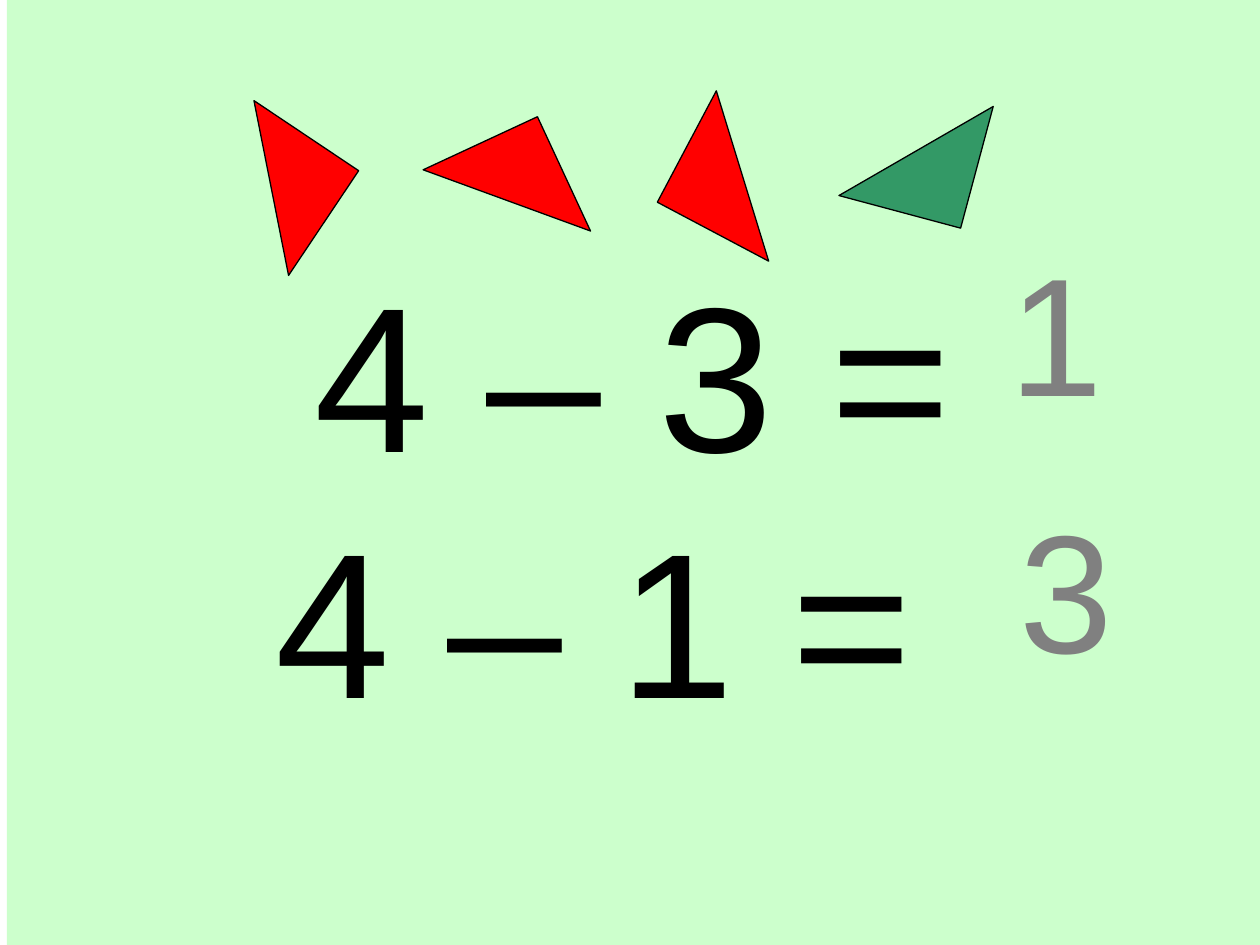
from pptx import Presentation
from pptx.dml.color import RGBColor
from pptx.enum.shapes import MSO_SHAPE
from pptx.enum.text import MSO_ANCHOR, PP_ALIGN
from pptx.util import Pt

HUES = {"mint": "CCFFCC", "red": "FF0000", "green": "339966",
        "black": "000000", "gray": "808080"}


class Board:
    """Holds the style and the current slide."""

    def __init__(self, deck, font="Arial"):
        self.font = font
        self.slide = deck.slides.add_slide(deck.slide_layouts[6])

    def hue(self, name):
        return RGBColor.from_string(HUES[name])

    def shape(self, kind, left, top, width, height, fill, line=None, turn=0):
        item = self.slide.shapes.add_shape(
            kind, Pt(left), Pt(top), Pt(width), Pt(height))
        item.shadow.inherit = False
        item.rotation = turn
        item.fill.solid()
        item.fill.fore_color.rgb = self.hue(fill)
        if line:
            item.line.color.rgb = self.hue(line)
            item.line.width = Pt(0.75)
        else:
            item.line.fill.background()

    def text(self, words, left, top, width, height, size, color, align, anchor):
        box = self.slide.shapes.add_textbox(
            Pt(left), Pt(top), Pt(width), Pt(height))
        frame = box.text_frame
        frame.word_wrap = True
        frame.vertical_anchor = anchor
        frame.margin_top = frame.margin_bottom = 0
        frame.text = words
        line = frame.paragraphs[0]
        line.alignment = align
        font = line.runs[0].font
        font.name = self.font
        font.size = Pt(size)
        font.color.rgb = self.hue(color)


def main():
    deck = Presentation()
    deck.slide_width, deck.slide_height = Pt(720), Pt(540)
    board = Board(deck)
    board.shape(MSO_SHAPE.RECTANGLE, 3.9, 0, 716.1, 540, "mint")

    for left, top, turn, fill in (
            (119, 71.4, 213.8, "red"), (253.6, 78.5, 155.1, "red"),
            (388.3, 64.6, 27.9, "red"), (487.5, 50.3, 285, "green")):
        board.shape(MSO_SHAPE.RIGHT_TRIANGLE, left, top, 72, 72,
                    fill, "black", turn)

    for words, left, top in (("4 – 3 =", 161.5, 140.6),
                             ("4 – 1 =", 139.5, 281.1)):
        board.text(words, left, top, 400, 136, 118, "black",
                   PP_ALIGN.CENTER, MSO_ANCHOR.TOP)

    for words, left, top in (("1", 570, 145.4), ("3", 575.3, 292.3)):
        board.text(words, left, top, 85.5, 85, 96, "gray",
                   PP_ALIGN.LEFT, MSO_ANCHOR.MIDDLE)

    deck.save("out.pptx")


if __name__ == "__main__":
    main()
